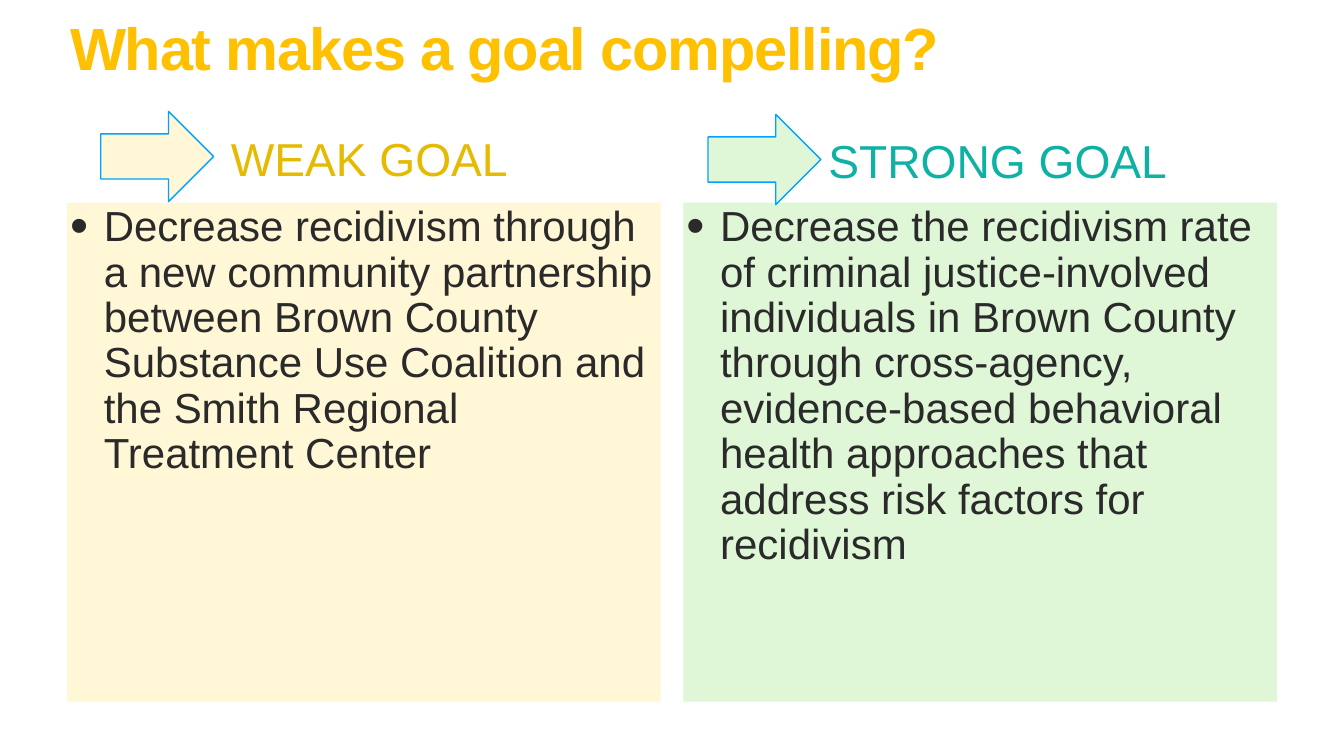
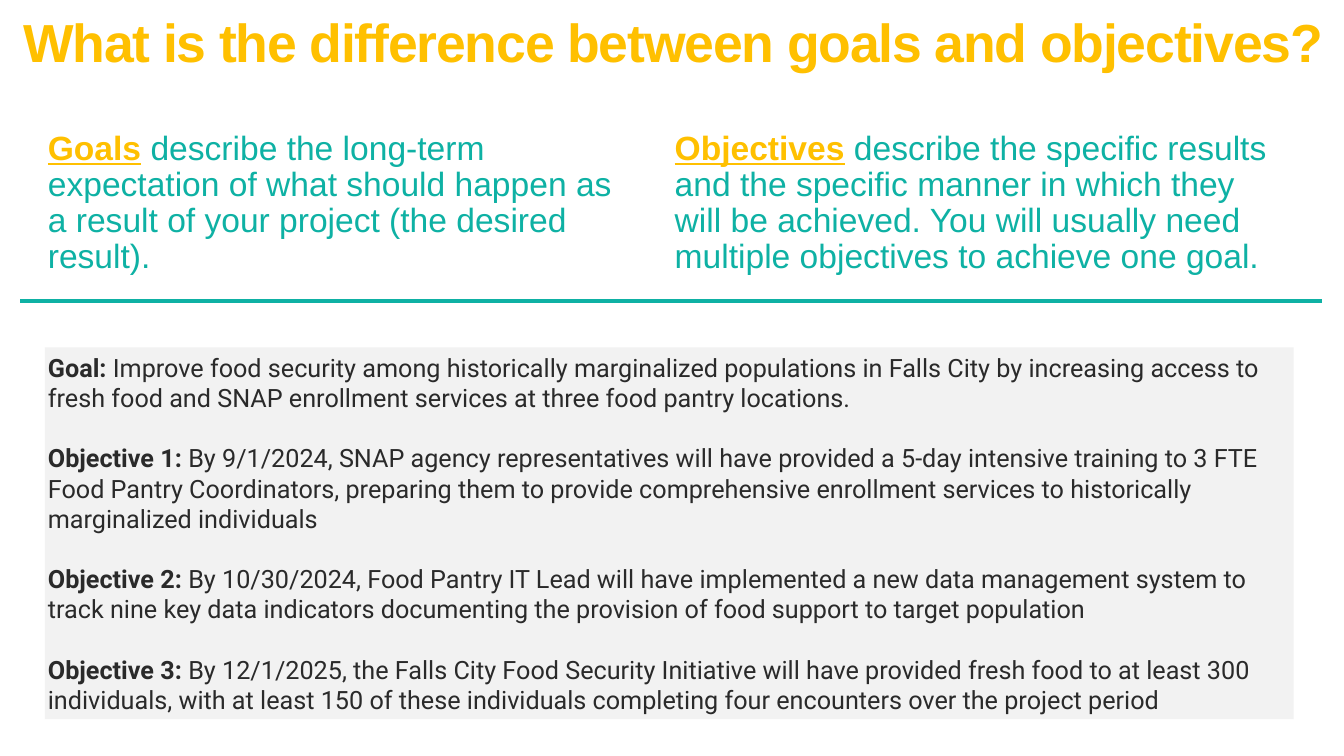
"""Build two slides on writing goals and objectives."""
from dataclasses import dataclass

import pptx
import pptx.dml.color
import pptx.enum.shapes
import pptx.enum.text
import pptx.oxml.ns
import pptx.oxml.xmlchemy
import pptx.util
from lxml import etree
from pptx.util import Inches

GOLD, TEAL, INK = "FFC000", "0EB1A4", "2A2A2A"
CREAM, MINT, GREY, ARROW_BLUE = "FFF7D6", "DFF7D7", "F2F2F2", "00A2FF"
MARGIN = 0.06
RECTANGLE = pptx.enum.shapes.MSO_SHAPE.RECTANGLE
ARROW = pptx.enum.shapes.MSO_SHAPE.RIGHT_ARROW
TOP = pptx.enum.text.MSO_ANCHOR.TOP
MIDDLE = pptx.enum.text.MSO_ANCHOR.MIDDLE


@dataclass(frozen=True)
class Box:
    """A position and size in inches."""
    left: float
    top: float
    width: float
    height: float

    def lengths(self):
        """Return the four values as lengths."""
        return [Inches(v) for v in (self.left, self.top, self.width, self.height)]


@dataclass(frozen=True)
class GoalExample:
    """One column of the goal comparison."""
    heading: str
    heading_color: str
    heading_box: Box
    arrow_box: Box
    panel_box: Box
    panel_color: str
    goal: str


@dataclass(frozen=True)
class Statement:
    """A highlighted term followed by its explanation."""
    term: str
    explanation: str


@dataclass(frozen=True)
class Definition:
    """A statement with its place on the slide."""
    statement: Statement
    box: Box


EXAMPLES = [
    GoalExample(
        "WEAK GOAL", "E5BA00", Box(4.52, 2.52, 11.78, 1.22),
        Box(2, 2.21, 2.24, 1.79), Box(1.33, 4.02, 11.78, 9.9), CREAM,
        "Decrease recidivism through a new community partnership between Brown "
        "County Substance Use Coalition and the Smith Regional Treatment Center"),
    GoalExample(
        "STRONG GOAL", TEAL, Box(16.38, 2.56, 11.54, 1.22),
        Box(14.05, 2.27, 2.24, 1.79), Box(13.56, 4.02, 11.78, 9.9), MINT,
        "Decrease the recidivism rate of criminal justice-involved individuals in "
        "Brown County through cross-agency, evidence-based behavioral health "
        "approaches that address risk factors for recidivism"),
]

DEFINITIONS = [
    Definition(Statement(
        "Goals", " describe the long-term expectation of what should happen as a "
        "result of your project (the desired result)."), Box(0.89, 2.54, 11.35, 3.14)),
    Definition(Statement(
        "Objectives", " describe the specific results and the specific manner in "
        "which they will be achieved. You will usually need multiple objectives "
        "to achieve one goal."), Box(13.33, 2.54, 12.24, 4)),
]

PLAN = [
    Statement("Goal: ", "Improve food security among historically marginalized "
              "populations in Falls City by increasing access to fresh food and SNAP "
              "enrollment services at three food pantry locations."),
    Statement("Objective 1:", " By 9/1/2024, SNAP agency representatives will have "
              "provided a 5-day intensive training to 3 FTE Food Pantry Coordinators, "
              "preparing them to provide comprehensive enrollment services to "
              "historically marginalized individuals"),
    Statement("Objective 2:", " By 10/30/2024, Food Pantry IT Lead will have "
              "implemented a new data management system to track nine key data "
              "indicators documenting the provision of food support to target "
              "population"),
    Statement("Objective 3: ", "By 12/1/2025, the Falls City Food Security Initiative "
              "will have provided fresh food to at least 300 individuals, with at "
              "least 150 of these individuals completing four encounters over the "
              "project period"),
]


def rgb(value: str) -> pptx.dml.color.RGBColor:
    """Turn a hex string into a colour."""
    return pptx.dml.color.RGBColor.from_string(value)


def write(paragraph, text: str, *, size: float, color: str, font: str = "Arial",
          bold: bool = False, underline: bool = False, tracking: int = 0) -> None:
    """Add a formatted run to a paragraph."""
    run = paragraph.add_run()
    run.text = text
    run.font.size = pptx.util.Pt(size)
    run.font.name = font
    run.font.bold = bold
    run.font.underline = underline
    run.font.color.rgb = rgb(color)
    if tracking:
        run.font._element.set("spc", str(tracking))


def prepare_frame(holder, anchor):
    """Set the margins, wrapping and anchor of a text frame."""
    frame = holder.text_frame
    frame.word_wrap = True
    frame.vertical_anchor = anchor
    frame.margin_left = frame.margin_right = Inches(MARGIN)
    frame.margin_top = frame.margin_bottom = Inches(MARGIN)
    return frame


def add_text_frame(slide, box: Box, anchor=TOP):
    """Add a text box and return its frame."""
    return prepare_frame(slide.shapes.add_textbox(*box.lengths()), anchor)


def add_filled(slide, preset, box: Box, fill: str, outline: str = ""):
    """Add a filled preset shape, with an outline when a colour is given."""
    shape = slide.shapes.add_shape(preset, *box.lengths())
    shape.shadow.inherit = False
    shape.fill.solid()
    shape.fill.fore_color.rgb = rgb(fill)
    if outline:
        shape.line.color.rgb = rgb(outline)
        shape.line.width = pptx.util.Pt(2)
    else:
        shape.line.fill.background()
    return shape


def start_paragraph(frame, first: bool = True, line_spacing: float = 1.0):
    """Return a left-aligned paragraph of the frame."""
    paragraph = frame.paragraphs[0] if first else frame.add_paragraph()
    paragraph.alignment = pptx.enum.text.PP_ALIGN.LEFT
    paragraph.line_spacing = line_spacing
    return paragraph


def add_bullet(paragraph) -> None:
    """Give a paragraph a hanging round bullet."""
    properties = paragraph._p.get_or_add_pPr()
    properties.set("marL", str(Inches(0.67)))
    properties.set("indent", str(Inches(-0.67)))
    for tag, key, value in (("a:buSzPct", "val", "123000"),
                            ("a:buFont", "typeface", "Arial"),
                            ("a:buChar", "char", "•")):
        etree.SubElement(properties, pptx.oxml.ns.qn(tag)).set(key, value)


def add_title(slide, text: str, box: Box, size: float) -> None:
    """Add the gold slide title."""
    paragraph = start_paragraph(add_text_frame(slide, box), line_spacing=0.8)
    write(paragraph, text, size=size, color=GOLD, bold=True, tracking=-170)


def add_divider(slide, left: float, right: float, top: float) -> None:
    """Add the teal line across the slide."""
    divider = slide.shapes.add_connector(
        pptx.enum.shapes.MSO_CONNECTOR.STRAIGHT,
        Inches(left), Inches(top), Inches(right), Inches(top))
    divider.line.color.rgb = rgb(TEAL)
    divider.line.width = pptx.util.Pt(6)
    etree.SubElement(divider._element.spPr, pptx.oxml.ns.qn("a:effectLst"))


def build_comparison(slide) -> None:
    """Build the weak and strong goal slide."""
    add_title(slide, "What makes a goal compelling?", Box(1.33, 0.44, 21.33, 1.65), 85)
    for example in EXAMPLES:
        panel = add_filled(slide, RECTANGLE, example.panel_box, example.panel_color)
        goal = start_paragraph(prepare_frame(panel, TOP), line_spacing=0.9)
        add_bullet(goal)
        write(goal, example.goal, size=60, color=INK)
        heading = start_paragraph(add_text_frame(slide, example.heading_box, MIDDLE))
        write(heading, example.heading, size=66, color=example.heading_color)
        add_filled(slide, ARROW, example.arrow_box, example.panel_color, ARROW_BLUE)


def build_difference(slide) -> None:
    """Build the goals and objectives slide."""
    add_title(slide, "What is the difference between goals and objectives?",
              Box(0.4, 0.36, 26.27, 1.24), 76.5)
    for definition in DEFINITIONS:
        paragraph = start_paragraph(add_text_frame(slide, definition.box),
                                    line_spacing=0.9)
        write(paragraph, definition.statement.term, size=48, color=GOLD,
              bold=True, underline=True)
        write(paragraph, definition.statement.explanation, size=48, color=TEAL)
    plan_panel = add_filled(slide, RECTANGLE, Box(0.89, 6.89, 24.78, 7.38), GREY)
    plan_frame = prepare_frame(plan_panel, MIDDLE)
    for index, statement in enumerate(PLAN):
        paragraph = start_paragraph(plan_frame, first=index == 0)
        paragraph.space_before = pptx.util.Pt(43 if index else 0)
        write(paragraph, statement.term, size=36, color=INK, font="Roboto", bold=True)
        write(paragraph, statement.explanation, size=36, color=INK, font="Roboto")
    add_divider(slide, 0.4, 26.24, 5.98)


def main() -> None:
    """Create and save the presentation."""
    deck = pptx.Presentation()
    deck.slide_width, deck.slide_height = Inches(26.67), Inches(15)
    for build in (build_comparison, build_difference):
        build(deck.slides.add_slide(deck.slide_layouts[6]))
    deck.save("out.pptx")


if __name__ == "__main__":
    main()
